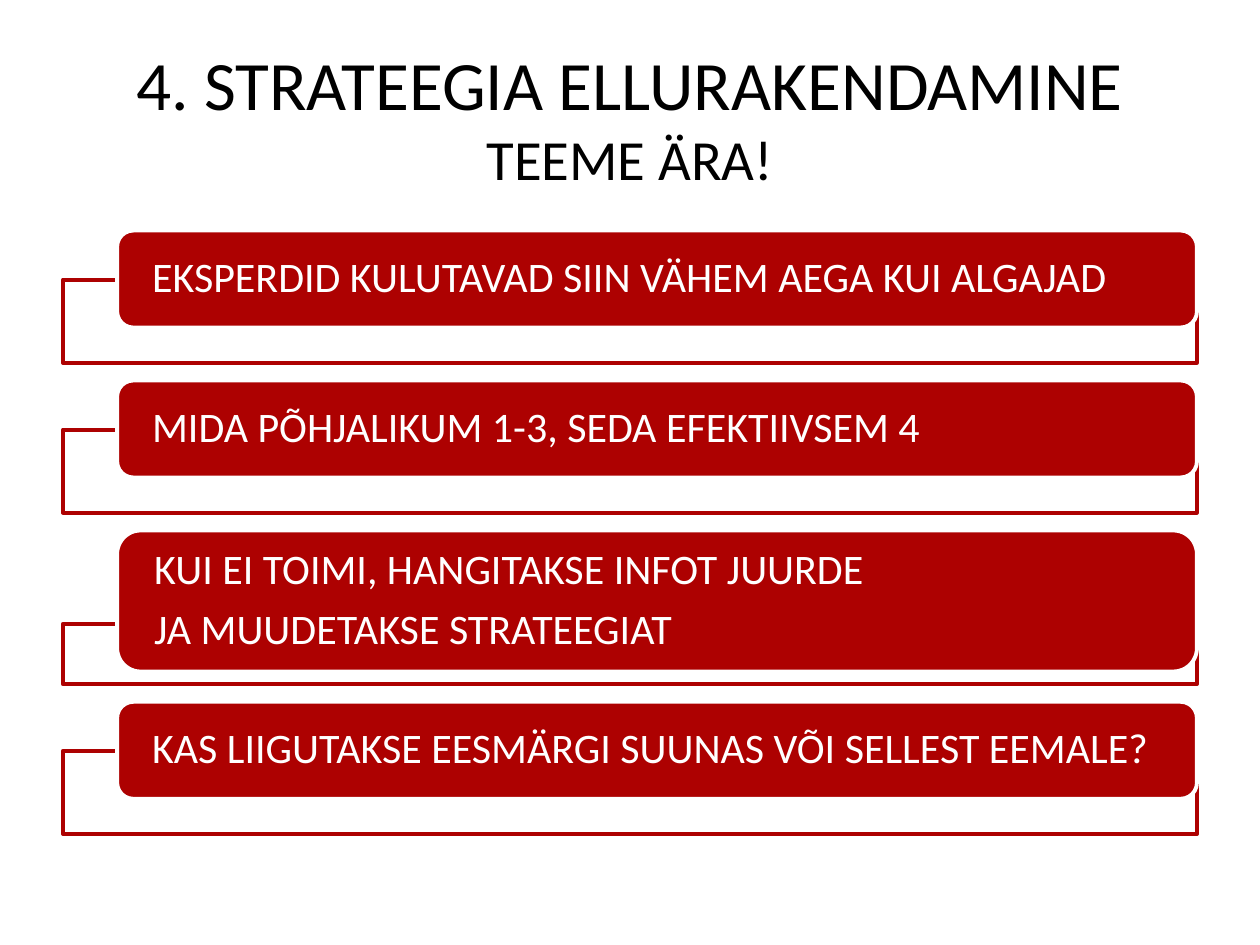
from pptx import Presentation
from pptx.dml.color import RGBColor
from pptx.enum.shapes import MSO_SHAPE
from pptx.enum.text import MSO_ANCHOR, PP_ALIGN
from pptx.util import Inches, Pt

RECT, ROUNDED = MSO_SHAPE.RECTANGLE, MSO_SHAPE.ROUNDED_RECTANGLE
MIDDLE = MSO_ANCHOR.MIDDLE
LEFT, CENTER = PP_ALIGN.LEFT, PP_ALIGN.CENTER
FONT = "Calibri"
COLORS = {"red": "AD0101", "white": "FFFFFF", "black": "000000"}


def add_box(kind, x, y, w, h, fill, line):
    sp = s.shapes.add_shape(kind, Inches(x), Inches(y), Inches(w), Inches(h))
    sp.shadow.inherit = False
    sp.fill.solid()
    sp.fill.fore_color.rgb = RGBColor.from_string(COLORS[fill])
    sp.line.color.rgb = RGBColor.from_string(COLORS[line])
    sp.line.width = Pt(2.25)
    return sp


def style_run(r, size, color):
    r.font.name = FONT
    r.font.size = Pt(size)
    r.font.color.rgb = RGBColor.from_string(COLORS[color])


prs = Presentation()
prs.slide_width, prs.slide_height = Inches(10), Inches(7.5)
s = prs.slides.add_slide(prs.slide_layouts[6])

# Title with a smaller second line
title = s.shapes.add_textbox(Inches(0.5), Inches(0.3), Inches(9), Inches(1.25))
tf = title.text_frame
tf.word_wrap = True
tf.vertical_anchor = MIDDLE
p = tf.paragraphs[0]
p.text = "4. STRATEEGIA ELLURAKENDAMINE\vTEEME ÄRA!"
p.alignment = CENTER
for r, size in zip(p.runs, (39.6, 32.4)):
    style_run(r, size, "black")

# Points: text, bar top, bar height, frame top, frame height
points = [
    ("EKSPERDID KULUTAVAD SIIN VÄHEM AEGA KUI ALGAJAD", 1.83, 0.77, 2.22, 0.66),
    ("MIDA PÕHJALIKUM 1-3, SEDA EFEKTIIVSEM 4", 3.02, 0.77, 3.41, 0.66),
    ("KUI EI TOIMI, HANGITAKSE INFOT JUURDE\nJA MUUDETAKSE STRATEEGIAT",
     4.21, 1.12, 4.95, 0.48),
    ("KAS LIIGUTAKSE EESMÄRGI SUUNAS VÕI SELLEST EEMALE?", 5.57, 0.77, 5.96, 0.66),
]

# Each point is a red bar over an outlined frame
for text, bar_y, bar_h, frame_y, frame_h in points:
    add_box(RECT, 0.5, frame_y, 9, frame_h, "white", "red")
    bar = add_box(ROUNDED, 0.93, bar_y, 8.57, bar_h, "red", "white")
    tf = bar.text_frame
    tf.word_wrap = True
    tf.vertical_anchor = MIDDLE
    tf.margin_left = tf.margin_right = Inches(0.24)
    tf.margin_top = tf.margin_bottom = 0
    tf.text = text
    for p in tf.paragraphs:
        p.alignment = LEFT
        p.line_spacing = 0.9
        p.space_after = Pt(8.4)
        style_run(p.runs[0], 24, "white")

prs.save("out.pptx")
